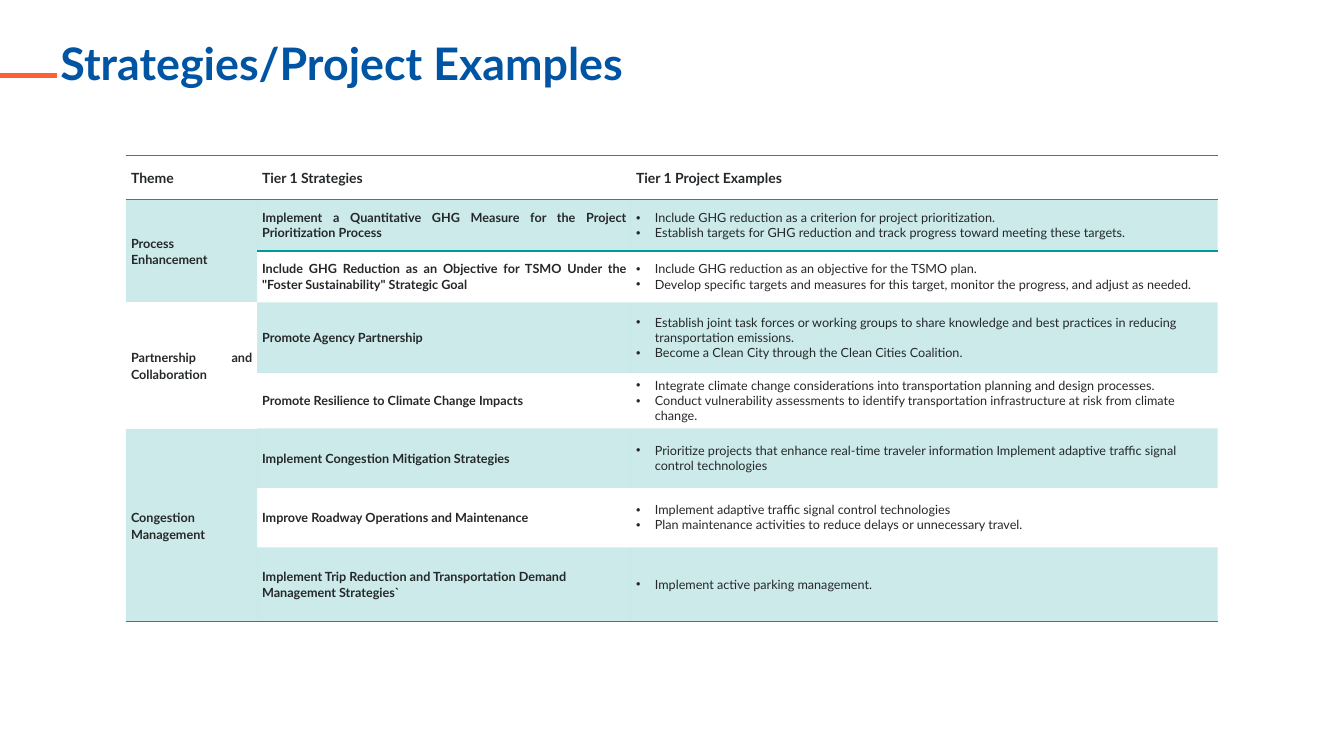
from lxml import etree
from pptx import Presentation
from pptx import util as u
from pptx.dml.color import RGBColor
from pptx.enum import shapes, text
from pptx.oxml.ns import qn

Pt = u.Pt
COLORS = {"title": "0054A4", "accent": "FF6036", "text": "25282A",
          "teal": "009999", "white": "FFFFFF"}
PLAIN_TABLE = "{2D5ABB26-0587-4C30-8999-92F81FD0307C}"
JUSTIFY = text.PP_ALIGN.JUSTIFY
COLUMNS = [93.6, 267.12, 419.04]
ROWS = [31.68, 36.72, 36.72, 50.4, 38.88, 42.48, 42.48, 53.28]
HEADERS = ["Theme", "Tier 1 Strategies", "Tier 1 Project Examples"]
THEMES = [
    ("Process Enhancement", [
        ("Implement a Quantitative GHG Measure for the Project Prioritization Process", JUSTIFY,
         ["Include GHG reduction as a criterion for project prioritization.",
          "Establish targets for GHG reduction and track progress toward meeting these targets."]),
        ('Include GHG Reduction as an Objective for TSMO Under the "Foster Sustainability" '
         "Strategic Goal", JUSTIFY,
         ["Include GHG reduction as an objective for the TSMO plan.",
          "Develop specific targets and measures for this target, monitor the progress, "
          "and adjust as needed."]),
    ]),
    ("Partnership and Collaboration", [
        ("Promote Agency Partnership", JUSTIFY,
         ["Establish joint task forces or working groups to share knowledge and best practices "
          "in reducing transportation emissions.",
          "Become a Clean City through the Clean Cities Coalition."]),
        ("Promote Resilience to Climate Change Impacts", JUSTIFY,
         ["Integrate climate change considerations into transportation planning and design "
          "processes.",
          "Conduct vulnerability assessments to identify transportation infrastructure at risk "
          "from climate change."]),
    ]),
    ("Congestion Management", [
        ("Implement Congestion Mitigation Strategies", JUSTIFY,
         ["Prioritize projects that enhance real-time traveler information Implement adaptive "
          "traffic signal control technologies"]),
        ("Improve Roadway Operations and Maintenance", None,
         ["Implement adaptive traffic signal control technologies",
          "Plan maintenance activities to reduce delays or unnecessary travel."]),
        ("Implement Trip Reduction and Transportation Demand Management Strategies`", None,
         ["Implement active parking management."]),
    ]),
]


def rgb(name):
    return RGBColor.from_string(COLORS[name])


class SlideBuilder:
    font = "Lato"
    spaced = {"line_spacing": 1.1, "space_after": Pt(6)}

    def __init__(self, prs):
        self.s = prs.slides.add_slide(prs.slide_layouts[6])

    def add_text(self, tf, lines, size, color="text", bold=True, bullet=False, fmt=None):
        tf.word_wrap = True
        for i, line in enumerate(lines):
            p = tf.paragraphs[0] if i == 0 else tf.add_paragraph()
            if bullet:
                pPr = p._p.get_or_add_pPr()
                pPr.set("marL", str(Pt(13.5)))
                pPr.set("indent", str(-Pt(13.5)))
                etree.SubElement(pPr, qn("a:buFont")).set("typeface", "Arial")
                etree.SubElement(pPr, qn("a:buChar")).set("char", "•")
            for name, value in (fmt or {}).items():
                setattr(p, name, value)
            r = p.add_run()
            r.text = line
            for name, value in {"name": self.font, "size": Pt(size), "bold": bold}.items():
                setattr(r.font, name, value)
            r.font.color.rgb = rgb(color)

    def title(self, line, x, y, w, h):
        tf = self.s.shapes.add_textbox(Pt(x), Pt(y), Pt(w), Pt(h)).text_frame
        for side in ("left", "top", "right", "bottom"):
            setattr(tf, f"margin_{side}", 0)
        self.add_text(tf, [line], 32, "title", fmt={"line_spacing": 0.9})

    def line(self, x1, y1, x2, y2, color, width):
        sp = self.s.shapes.add_connector(shapes.MSO_CONNECTOR.STRAIGHT,
                                         Pt(x1), Pt(y1), Pt(x2), Pt(y2))
        sp.line.color.rgb = rgb(color)
        sp.line.width = Pt(width)
        etree.SubElement(sp._element.spPr, qn("a:effectLst"))

    def table(self, x, y, columns, rows):
        table = self.s.shapes.add_table(len(rows), len(columns), Pt(x), Pt(y),
                                        Pt(sum(columns)), Pt(sum(rows))).table
        table._tbl.tblPr.find(qn("a:tableStyleId")).text = PLAIN_TABLE
        table.first_row = table.horz_banding = False
        for column, width in zip(table.columns, columns):
            column.width = Pt(width)
        for row, height in zip(table.rows, rows):
            row.height = Pt(height)
        return table

    def cell(self, cell, lines, size=9, tinted=False, top=None, bottom=None, **style):
        cell.vertical_anchor = text.MSO_ANCHOR.MIDDLE
        for side in ("left", "top", "right", "bottom"):
            setattr(cell, f"margin_{side}", Pt(3.6))
        self.borders(cell, top, bottom)
        if tinted:
            cell.fill.solid()
            cell.fill.fore_color.rgb = rgb("teal")
            color = cell._tc.tcPr.find(qn("a:solidFill")).find(qn("a:srgbClr"))
            etree.SubElement(color, qn("a:alpha")).set("val", "20000")
        else:
            cell.fill.background()
        self.add_text(cell.text_frame, lines, size, **style)

    def borders(self, cell, top, bottom):
        for tag, color in (("a:lnT", top), ("a:lnB", bottom)):
            if color:
                ln = etree.SubElement(cell._tc.get_or_add_tcPr(), qn(tag), w=str(Pt(1)))
                fill = etree.SubElement(ln, qn("a:solidFill"))
                etree.SubElement(fill, qn("a:srgbClr")).set("val", COLORS[color])

    def strategy_table(self, x, y):
        table = self.table(x, y, COLUMNS, ROWS)
        for col, header in enumerate(HEADERS):
            self.cell(table.cell(0, col), [header], 10, top="teal", bottom="teal",
                      fmt=self.spaced)
        row, last = 1, len(ROWS) - 1
        for i, (theme, strategies) in enumerate(THEMES):
            end = row + len(strategies) - 1
            origin = table.cell(row, 0)
            origin.merge(table.cell(end, 0))
            bottom = "teal" if end == last else "white"
            self.cell(origin, [theme], tinted=i % 2 == 0, top="white" if i else "teal",
                      bottom=bottom, fmt={"alignment": JUSTIFY, **self.spaced})
            self.borders(table.cell(end, 0), None, bottom)
            for strategy, align, examples in strategies:
                look = {"tinted": row % 2 == 1, "top": "teal" if row == 1 else None,
                        "bottom": "teal" if row == last else None}
                self.cell(table.cell(row, 1), [strategy], fmt={"alignment": align}, **look)
                self.cell(table.cell(row, 2), examples, bold=False, bullet=True, **look)
                row += 1


def main():
    prs = Presentation()
    prs.slide_width, prs.slide_height = Pt(960), Pt(540)
    slide = SlideBuilder(prs)
    slide.line(40.5, 54, 0, 54, "accent", 3.5)
    slide.strategy_table(90, 110.9)
    slide.title("Strategies/Project Examples", 43.2, 29.5, 864, 66.2)
    prs.save("out.pptx")


if __name__ == "__main__":
    main()
